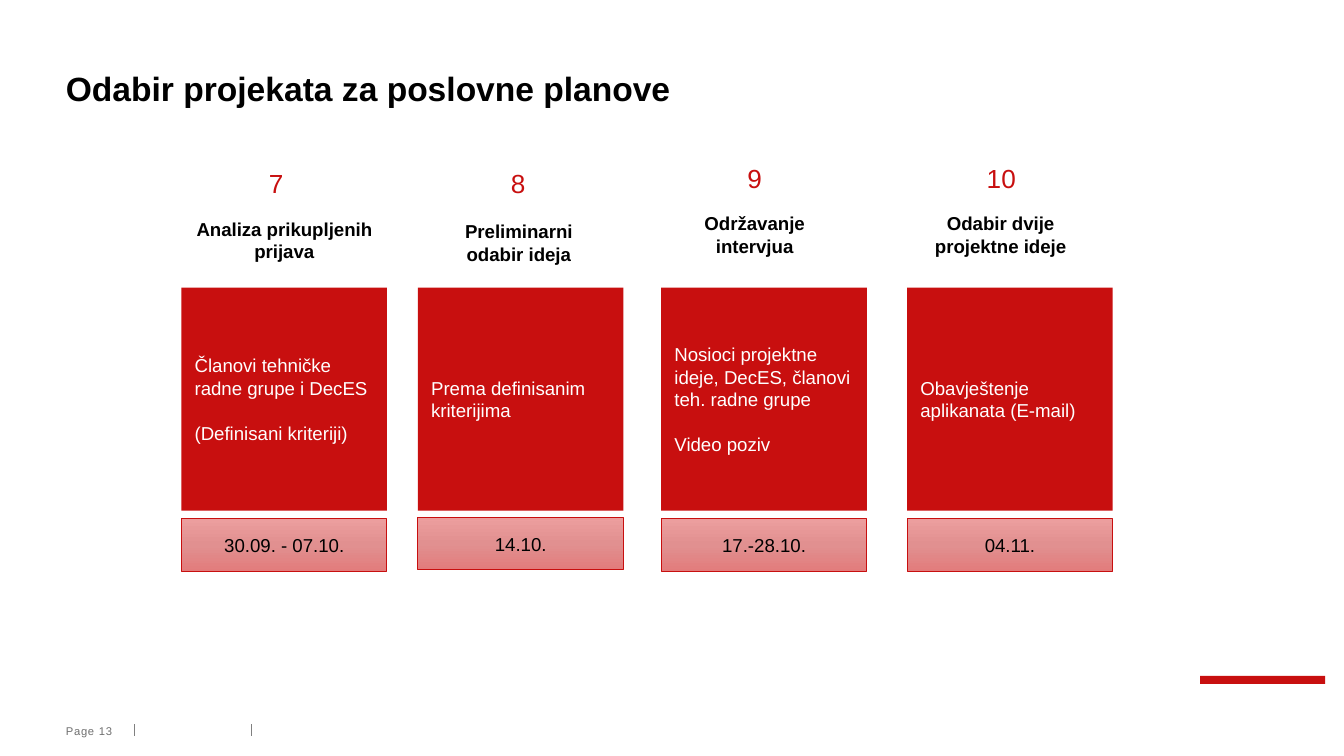
from copy import deepcopy

from lxml import etree
from pptx import Presentation, util as u
from pptx.dml.color import RGBColor
from pptx.enum import shapes, text
from pptx.oxml.ns import qn

PX = u.Inches(1) // 100  # 100 px to the inch
COLORS = {"red": "C80F0F", "black": "000000", "white": "FFFFFF",
          "gray": "808080", "page": "6F6F6F"}
DATE_GRADIENT = [(0, "EC9E9E"), (0.5, "E19090"), (1, "E27C7C")]
LEFT, CENTER = text.PP_ALIGN.LEFT, text.PP_ALIGN.CENTER
MIDDLE = text.MSO_ANCHOR.MIDDLE


def write(sp, lines, size, color, align=LEFT, bold=False, anchor=text.MSO_ANCHOR.TOP):
    """Fill a shape with paragraphs set one empty line apart."""
    tf = sp.text_frame
    tf.word_wrap = True
    tf.vertical_anchor = anchor
    for i, line in enumerate(lines):
        p = tf.add_paragraph() if i else tf.paragraphs[0]
        p.alignment = align
        if i:
            p.space_before = u.Pt(size * 1.2)
        r = p.add_run()
        r.text = line
        r.font.name = "Arial"
        r.font.size = u.Pt(size)
        r.font.bold = bold
        r.font.color.rgb = RGBColor.from_string(COLORS[color])
    return tf


def add_box(x, y, w, h):
    """Add a red rectangle without outline or shadow."""
    sp = s.shapes.add_shape(shapes.MSO_SHAPE.RECTANGLE, x * PX, y * PX, w * PX, h * PX)
    sp.shadow.inherit = False
    sp.fill.solid()
    sp.fill.fore_color.rgb = RGBColor.from_string(COLORS["red"])
    sp.line.fill.background()
    return sp


prs = Presentation()
prs.slide_width = 1000 * PX
prs.slide_height = prs.slide_width * 9 // 16
s = prs.slides.add_slide(prs.slide_layouts[5])

# Footer
add_box(893, 503, 93, 6)
for x in (187, 100):
    divider = s.shapes.add_connector(shapes.MSO_CONNECTOR.STRAIGHT,
                                     x * PX, 539 * PX, x * PX, 548 * PX)
    divider.line.color.rgb = RGBColor.from_string(COLORS["gray"])
    divider.line.width = u.Pt(0.75)
    etree.SubElement(divider._element.spPr, qn("a:effectLst"))
page = s.shapes.add_textbox(49 * PX, 539 * PX, 49 * PX, 10 * PX)
tf = write(page, ["Page 13"], 6, "page", anchor=MIDDLE)
tf.margin_left = tf.margin_right = tf.margin_top = tf.margin_bottom = 0
tf.paragraphs[0].runs[0].font._element.set("spc", "40")

# Title
title = s.shapes.title
title.left, title.top, title.width, title.height = 49 * PX, 22 * PX, 937 * PX, 59 * PX
tf = write(title, ["Odabir projekata za poslovne planove"], 18, "black",
           bold=True, anchor=text.MSO_ANCHOR.BOTTOM)
tf.auto_size = text.MSO_AUTO_SIZE.NONE
tf.margin_left = tf.margin_top = tf.margin_bottom = 0
tf.margin_right = 8 * PX
tf.paragraphs[0].line_spacing = 0.9

# Steps: card left, number (text, left, top, width), heading (text, left, top, width),
# card lines, date (text, top)
steps = [
    (135, ("7", 190, 120, 31), ("Analiza prikupljenih prijava", 124, 157, 175),
     ["Članovi tehničke radne grupe i DecES", "(Definisani kriteriji)"],
     ("30.09. - 07.10.", 386)),
    (311, ("8", 370, 120, 31), ("Preliminarni odabir ideja", 315, 159, 142),
     ["Prema definisanim kriterijima"], ("14.10.", 385)),
    (492, ("9", 546, 116, 31), ("Održavanje intervjua", 485, 153, 153),
     ["Nosioci projektne ideje, DecES, članovi teh. radne grupe", "Video poziv"],
     ("17.-28.10.", 386)),
    (675, ("10", 724, 116, 42), ("Odabir dvije projektne ideje", 668, 153, 153),
     ["Obavještenje aplikanata (E-mail)"], ("04.11.", 386)),
]
for left, number, heading, lines, (date, date_top) in steps:
    label, x, y, w = number
    sp = s.shapes.add_textbox(x * PX, y * PX, w * PX, 34 * PX)
    write(sp, [label], 14, "red", CENTER).word_wrap = False

    label, x, y, w = heading
    sp = s.shapes.add_textbox(x * PX, y * PX, w * PX, 44 * PX)
    write(sp, [label], 10, "black", CENTER, bold=True)

    write(add_box(left, 214, 153, 166), lines, 10, "white", anchor=MIDDLE)

    sp = add_box(left, date_top, 153, 39)
    sp.fill.gradient()
    sp.fill.gradient_angle = 270
    stop_list = sp._element.spPr.find(qn("a:gradFill")).find(qn("a:gsLst"))
    stop_list.insert(1, deepcopy(stop_list[0]))
    for stop, (position, color) in zip(sp.fill.gradient_stops, DATE_GRADIENT):
        stop.position = position
        stop.color.rgb = RGBColor.from_string(color)
    sp.line.color.rgb = RGBColor.from_string(COLORS["red"])
    sp.line.width = u.Pt(0.5)
    write(sp, [date], 10, "black", CENTER, anchor=MIDDLE)

prs.save("out.pptx")
